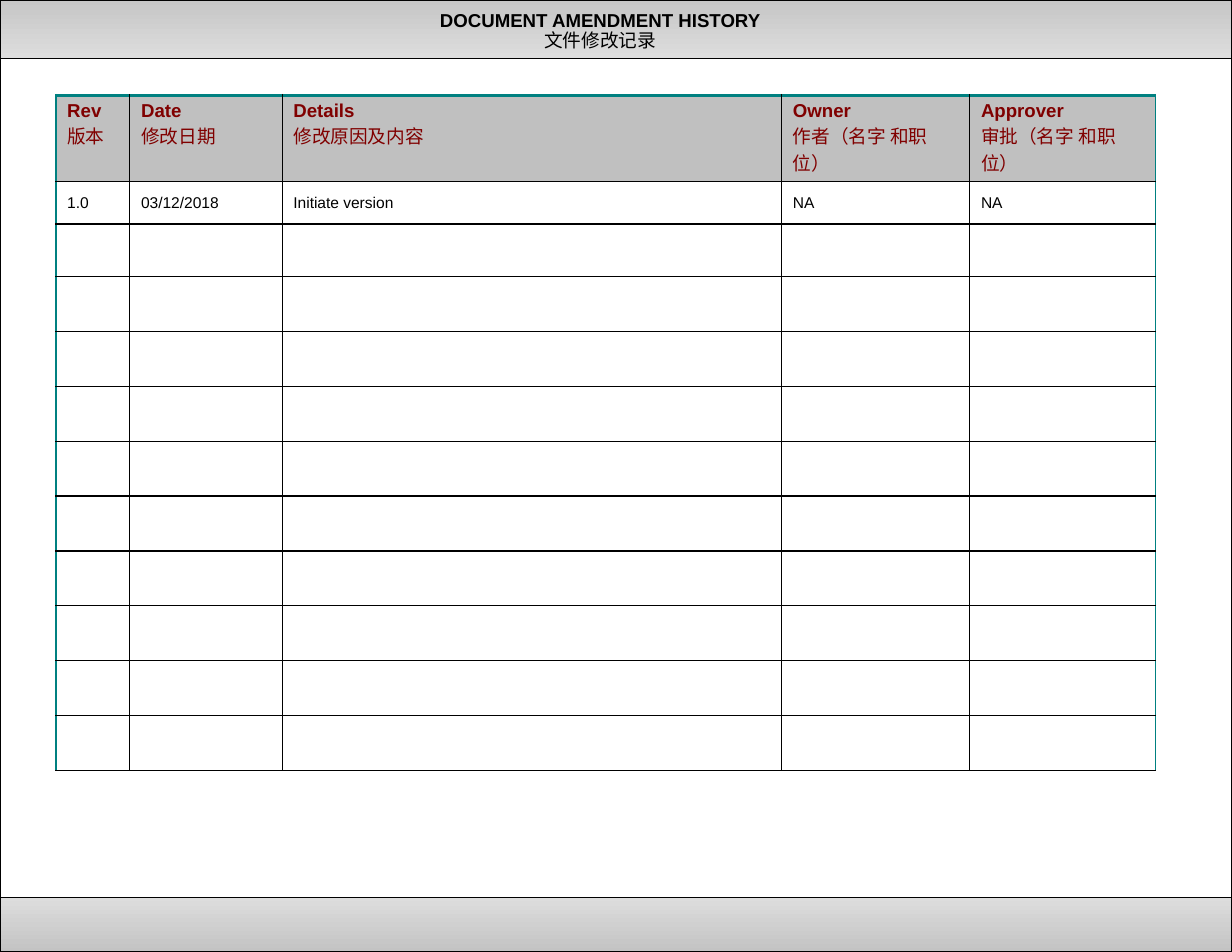
from lxml.etree import SubElement
from pptx import Presentation
from pptx.dml.color import RGBColor
from pptx.enum.shapes import MSO_SHAPE
from pptx.enum.text import MSO_ANCHOR, MSO_AUTO_SIZE, PP_ALIGN
from pptx.oxml.ns import qn
from pptx.util import Inches, Pt

BLACK = RGBColor(0x00, 0x00, 0x00)
WHITE = RGBColor(0xFF, 0xFF, 0xFF)
TEAL = RGBColor(0x00, 0x80, 0x80)
MAROON = RGBColor(0x80, 0x00, 0x00)
SILVER = RGBColor(0xC0, 0xC0, 0xC0)
LIGHT = RGBColor(0xDD, 0xDD, 0xDD)
BAND_TOP = RGBColor(0xC6, 0xC6, 0xC6)
BAND_BOTTOM = RGBColor(0xC3, 0xC3, 0xC3)

COLS, ROWS = 110, 85

HEADERS = [
    ("Rev", "版本"),
    ("Date", "修改日期"),
    ("Details", "修改原因及内容"),
    ("Owner", "作者（名字 和职位）"),
    ("Approver", "审批（名字 和职位）"),
]
ENTRIES = [["1.0", "03/12/2018", "Initiate version", "NA", "NA"]]
COL_WIDTHS = [6.6, 13.6, 44.6, 16.8, 16.6]
ROW_HEIGHTS = [4.3, 3.8, 4.7] + [4.9] * 9


class Page:
    """Draws on one slide, with lengths in columns and rows of its grid."""

    font = "Arial"
    heading_size = Pt(12)
    body_size = Pt(10)

    def __init__(self, prs):
        self.col = prs.slide_width / COLS
        self.row = prs.slide_height / ROWS
        self.s = prs.slides.add_slide(prs.slide_layouts[5])

    def box(self, x, y, w, h):
        return [int(n) for n in (x * self.col, y * self.row, w * self.col, h * self.row)]

    def rect(self, x, y, w, h, gradient=None, weight=0.75):
        sp = self.s.shapes.add_shape(MSO_SHAPE.RECTANGLE, *self.box(x, y, w, h))
        sp.shadow.inherit = False
        sp.line.color.rgb = BLACK
        sp.line.width = Pt(weight)
        if gradient:
            sp.fill.gradient()
            sp.fill.gradient_angle = 270
            for stop, color in zip(sp.fill.gradient_stops, gradient):
                stop.color.rgb = color
        else:
            sp.fill.background()

    def set_lines(self, tf, lines, size, color, bold_first=False):
        """Put one paragraph per line, with the first one bold on request."""
        tf.text = "\n".join(lines)
        for i, p in enumerate(tf.paragraphs):
            p.font.name = self.font
            p.font.size = size
            p.font.bold = bold_first and i == 0
            p.font.color.rgb = color

    def title(self, x, y, w, h, lines):
        sp = self.s.shapes.title
        sp.left, sp.top, sp.width, sp.height = self.box(x, y, w, h)
        sp.element.getparent().append(sp.element)  # in front of the bands
        tf = sp.text_frame
        tf.word_wrap = True
        tf.auto_size = MSO_AUTO_SIZE.NONE
        tf.vertical_anchor = MSO_ANCHOR.MIDDLE
        self.set_lines(tf, lines, self.heading_size, BLACK, bold_first=True)
        for p in tf.paragraphs:
            p.alignment = PP_ALIGN.CENTER
            p.line_spacing = 0.9

    def border(self, cell, side, color, weight):
        ln = SubElement(cell._tc.get_or_add_tcPr(), qn("a:ln" + side), w=str(Pt(weight)))
        fill = SubElement(ln, qn("a:solidFill"))
        SubElement(fill, qn("a:srgbClr"), val=str(color))

    def table(self, x, y, widths, heights, headers, entries):
        shape = self.s.shapes.add_table(
            len(heights), len(widths), *self.box(x, y, sum(widths), sum(heights)))
        table = shape.table
        table.first_row = table.horz_banding = False
        for column, width in zip(table.columns, widths):
            column.width = int(width * self.col)
        for row, height in zip(table.rows, heights):
            row.height = int(height * self.row)

        last = len(widths) - 1
        for i, row in enumerate(table.rows):
            for j, cell in enumerate(row.cells):
                self.border(cell, "L", *((TEAL, 1) if j == 0 else (BLACK, 0.75)))
                self.border(cell, "R", *((TEAL, 1) if j == last else (BLACK, 0.75)))
                self.border(cell, "T", *((TEAL, 2) if i == 0 else (BLACK, 1)))
                self.border(cell, "B", BLACK, 1)
                cell.fill.solid()
                cell.fill.fore_color.rgb = WHITE if i else SILVER
                if i == 0:
                    self.set_lines(cell.text_frame, headers[j], self.heading_size,
                                   MAROON, bold_first=True)
                elif i <= len(entries):
                    cell.vertical_anchor = MSO_ANCHOR.MIDDLE
                    self.set_lines(cell.text_frame, [entries[i - 1][j]],
                                   self.body_size, BLACK)


def main():
    prs = Presentation()
    prs.slide_width, prs.slide_height = Inches(11), Inches(8.5)
    page = Page(prs)
    page.rect(0, 80.1, COLS, 4.9, gradient=(LIGHT, BAND_BOTTOM))
    page.rect(0, 0, COLS, 5.2, gradient=(BAND_TOP, LIGHT))
    page.rect(0, 0, COLS, ROWS, weight=1.5)
    page.title(38.2, 0.3, 30.8, 5, ["DOCUMENT AMENDMENT HISTORY", "文件修改记录"])
    page.table(5, 8.5, COL_WIDTHS, ROW_HEIGHTS, HEADERS, ENTRIES)
    prs.save("out.pptx")


if __name__ == "__main__":
    main()
